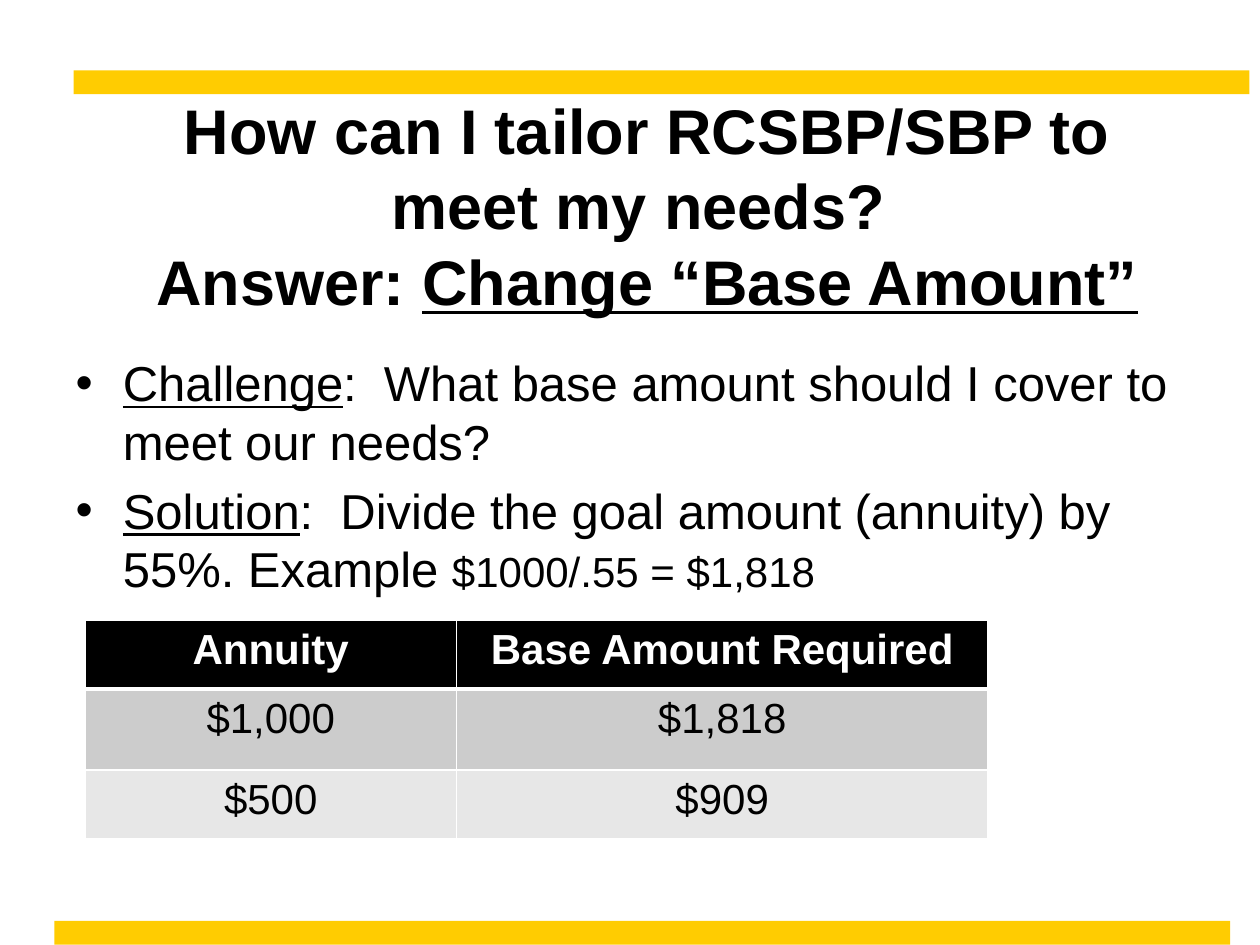
from lxml import etree
from pptx import Presentation
from pptx.dml.color import RGBColor
from pptx.enum.shapes import MSO_SHAPE
from pptx.enum.text import MSO_ANCHOR, MSO_AUTO_SIZE, PP_ALIGN
from pptx.oxml.ns import qn
from pptx.util import Pt

RECT = MSO_SHAPE.RECTANGLE
TOP, MIDDLE = MSO_ANCHOR.TOP, MSO_ANCHOR.MIDDLE
LEFT, CENTER = PP_ALIGN.LEFT, PP_ALIGN.CENTER
NO_FIT = MSO_AUTO_SIZE.NONE

THEME = {
    "font": "Arial", "title": 36, "body": 28, "small": 24, "lead": 1.2,
    "black": "000000", "white": "FFFFFF", "gold": "FFCC01",
    "fills": ["000000", "CCCCCC", "E7E7E7"],
}

TITLE = [
    ("How can I tailor RCSBP/SBP to meet my needs? \vAnswer: ", {}),
    ("Change “Base Amount”", {"line": True}),
]
POINTS = [
    [("Challenge", {"line": True}),
     (":  What base amount should I cover to meet our needs?", {})],
    [("Solution", {"line": True}),
     (":  Divide the goal amount (annuity) by 55%. Example ", {}),
     ("$1000/.55 = $1,818", {"size": THEME["small"]})],
]
ROWS = [
    ["Annuity", "Base Amount Required"],
    ["$1,000", "$1,818"],
    ["$500", "$909"],
]
BARS = [(42, 40.3), (31, 526.3)]
BAR_SIZE = (672, 13.5)
TITLE_BOX = (54, 54, 631.5, 126)
BODY_BOX = (36, 198, 648, 318)
GRID_AT = (48.5, 354.2)
COLS = [212.4, 303.6]
HEIGHTS = [39.6, 46.1, 39.6]


def write(par, text, size=THEME["body"], color=THEME["black"], bold=False, line=False):
    for i, part in enumerate(text.split("\v")):
        if i:
            par.add_line_break()
        run = par.add_run()
        run.text = part
        font = run.font
        font.name, font.size = THEME["font"], Pt(size)
        font.bold, font.underline = bold, line
        font.color.rgb = RGBColor.from_string(color)


def place(shape, box, anchor):
    shape.left, shape.top, shape.width, shape.height = map(Pt, box)
    frame = shape.text_frame
    frame.auto_size, frame.word_wrap = NO_FIT, True
    frame.vertical_anchor = anchor
    return frame


def fill_par(par, runs, size, align, bold=False):
    par.alignment = align
    par.line_spacing = Pt(size * THEME["lead"])
    for text, style in runs:
        write(par, text, **{"size": size, "bold": bold, **style})


def edge(cell, sides):
    props = cell._tc.get_or_add_tcPr()
    for i, (side, width) in enumerate(sides.items()):
        rule = etree.Element(qn("a:ln" + side), w=str(Pt(width)))
        paint = etree.SubElement(rule, qn("a:solidFill"))
        etree.SubElement(paint, qn("a:srgbClr"), val=THEME["white"])
        props.insert(i, rule)


def add_grid(slide):
    size = (sum(COLS), sum(HEIGHTS))
    grid = slide.shapes.add_table(
        len(ROWS), len(COLS), *map(Pt, GRID_AT + size)).table
    for col, width in zip(grid.columns, COLS):
        col.width = Pt(width)
    for r, row in enumerate(ROWS):
        grid.rows[r].height = Pt(HEIGHTS[r])
        head = r == 0
        for c, text in enumerate(row):
            cell = grid.cell(r, c)
            cell.fill.solid()
            cell.fill.fore_color.rgb = RGBColor.from_string(THEME["fills"][r])
            edge(cell, {"L": 1, "R": 1, "T": 3 if r == 1 else 1, "B": 3 if head else 1})
            par = cell.text_frame.paragraphs[0]
            par.alignment = CENTER
            write(par, text, size=THEME["small"], bold=head,
                  color=THEME["white" if head else "black"])


def main():
    deck = Presentation()
    deck.slide_width, deck.slide_height = Pt(720), Pt(540)
    slide = deck.slides.add_slide(deck.slide_layouts[1])

    for spot in BARS:
        bar = slide.shapes.add_shape(RECT, *map(Pt, spot + BAR_SIZE))
        bar.shadow.inherit = False
        bar.fill.solid()
        bar.fill.fore_color.rgb = RGBColor.from_string(THEME["gold"])
        bar.line.fill.background()

    title = place(slide.shapes.title, TITLE_BOX, MIDDLE)
    fill_par(title.paragraphs[0], TITLE, THEME["title"], CENTER, bold=True)

    body = place(slide.placeholders[1], BODY_BOX, TOP)
    for i, runs in enumerate(POINTS):
        par = body.add_paragraph() if i else body.paragraphs[0]
        par.space_before = Pt(5.6 if i else 0)
        fill_par(par, runs, THEME["body"], LEFT)

    add_grid(slide)
    deck.save("out.pptx")


if __name__ == "__main__":
    main()
